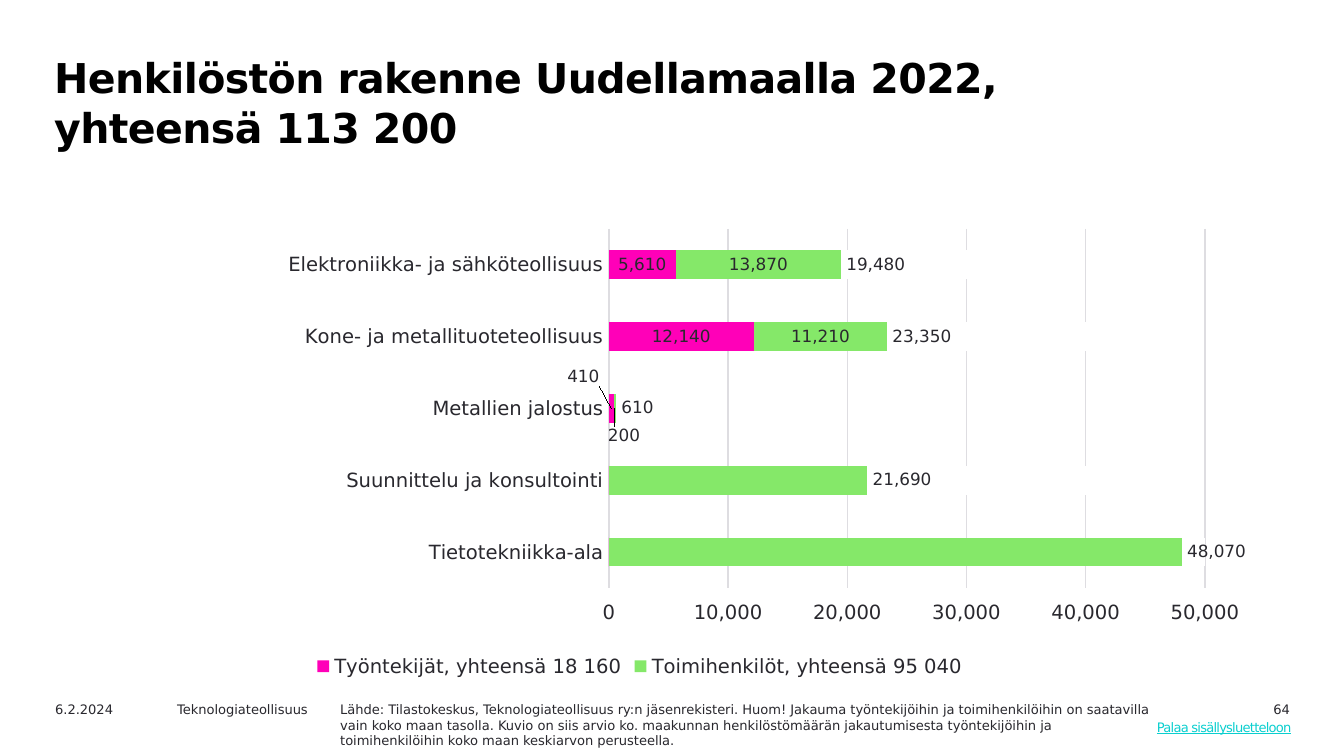
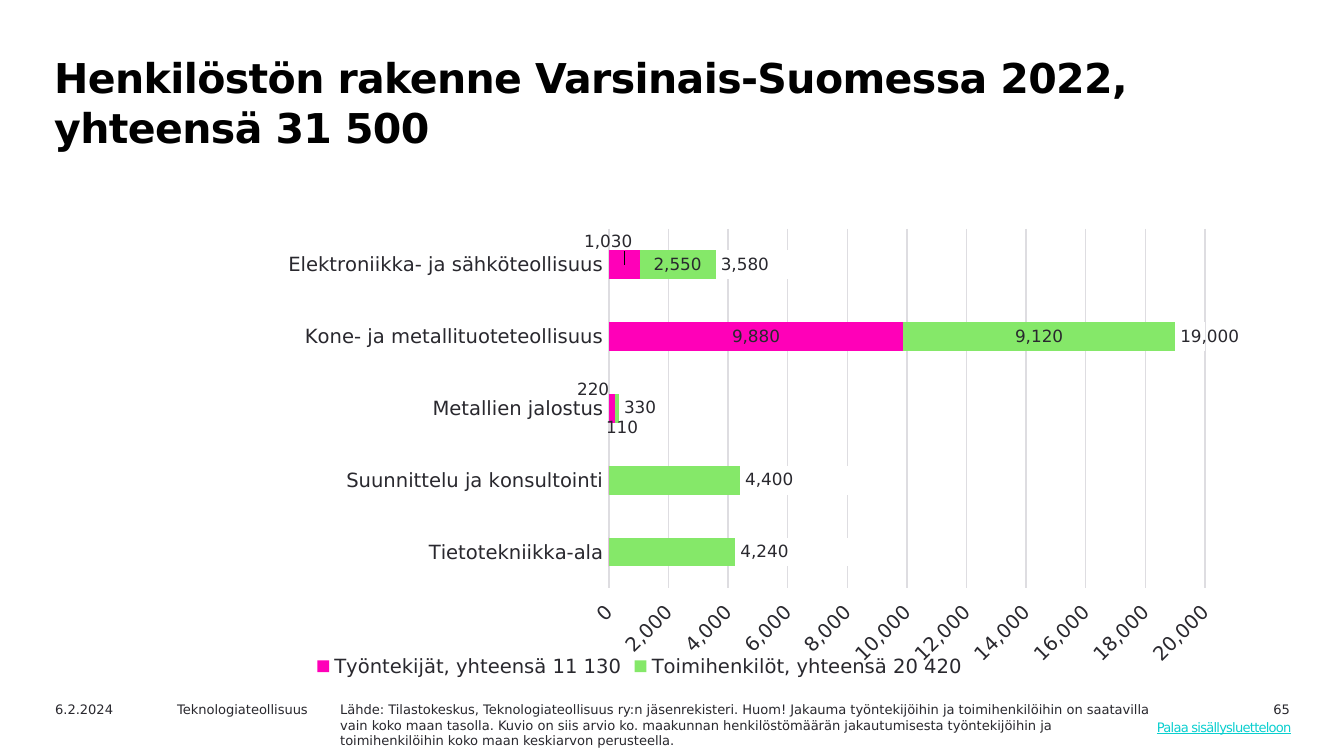
from pptx import Presentation
from pptx import util as u
from pptx.chart import data as chartdata
from pptx.dml import color
from pptx.enum import chart as charts
from pptx.enum import text
from pptx.oxml import parse_xml
from pptx.oxml.ns import nsdecls

FONT = "DejaVu Sans"
INK, BLACK, GRID, LINK = "29282E", "000000", "DEDDE1", "0ACFCF"
PINK, GREEN, WHITE = "FF00B8", "85E869", "FFFFFF"
NUMBERS = "#,##0"

PAGE = (1344, 756)
TITLE_BOX = (38, 42, 1175, 121)
CHART_BOX = (56, 163, 1204, 520)
FOOTER_BOX = (42, 695, 1274, 58)
PLOT = {"x": 0.46, "y": 0.13, "w": 0.49, "h": 0.69}
PLOT_PX = {"x": 553, "y": 66, "w": 596, "h": 359}

CATEGORIES = [
    "Tietotekniikka-ala",
    "Suunnittelu ja konsultointi",
    "Metallien jalostus",
    "Kone- ja metallituoteteollisuus",
    "Elektroniikka- ja sähköteollisuus",
]
SOURCE = (
    "Lähde: Tilastokeskus, Teknologiateollisuus ry:n jäsenrekisteri. Huom! "
    "Jakauma työntekijöihin ja toimihenkilöihin on saatavilla vain koko maan tasolla. "
    "Kuvio on siis arvio ko. maakunnan henkilöstömäärän jakautumisesta työntekijöihin ja "
    "toimihenkilöihin koko maan keskiarvon perusteella."
)

REGIONS = [
    {
        "title": "Henkilöstön rakenne Uudellamaalla 2022, yhteensä 113 200",
        "number": "64",
        "maximum": 50000,
        "workers": ("Työntekijät, yhteensä 18 160", [0, 0, 410, 12140, 5610]),
        "staff": ("Toimihenkilöt, yhteensä 95 040", [48070, 21690, 200, 11210, 13870]),
        "totals": [48070, 21690, 610, 23350, 19480],
        "worker_shifts": {2: (-28, -32)},
        "staff_shifts": {2: (9, 28)},
    },
    {
        "title": "Henkilöstön rakenne Varsinais-Suomessa 2022, yhteensä 31 500",
        "number": "65",
        "maximum": 20000,
        "workers": ("Työntekijät, yhteensä 11 130", [0, 0, 220, 9880, 1030]),
        "staff": ("Toimihenkilöt, yhteensä 20 420", [4240, 4400, 110, 9120, 2550]),
        "totals": [4240, 4400, 330, 19000, 3580],
        "worker_shifts": {2: (-19, -19), 4: (-16, -23)},
        "staff_shifts": {2: (5, 20)},
    },
]


def px(length):
    return u.Emu(round(length * 914400 / 134.4))


def rgb(value):
    return color.RGBColor.from_string(value)


def apply(target, values):
    for name, value in values.items():
        setattr(target, name, value)


def style_font(font, size, shade=INK, **extra):
    apply(font, {"name": FONT, "size": u.Pt(size), **extra})
    font.color.rgb = rgb(shade)


def add_text(page, box, words, size=7, shade=INK, spacing=0, frame=None, para=None, **extra):
    shape = page.shapes.add_textbox(*map(px, box))
    apply(shape.text_frame, {"word_wrap": True, **(frame or {})})
    paragraph = shape.text_frame.paragraphs[0]
    apply(paragraph, para or {})
    span = paragraph.add_run()
    span.text = words
    style_font(span.font, size, shade, **extra)
    if spacing:
        span.font._element.set("spc", str(spacing))
    return paragraph


def add_title(page, box, words):
    paragraph = add_text(
        page, box, words, 22, BLACK, -30,
        frame={"margin_top": px(9)}, para={"line_spacing": u.Pt(27)}, bold=True,
    )
    properties = paragraph._p.get_or_add_pPr()
    apply_indent = {"marL": str(px(3)), "indent": "0"}
    for name, value in apply_indent.items():
        properties.set(name, value)


def add_footer(page, box, number):
    left, top, width, height = box
    right = left + width
    add_text(page, (right - 139, top, 126, 24), number, para={"alignment": text.PP_ALIGN.RIGHT})
    add_text(page, (left, top, 134, 24), "6.2.2024")
    add_text(page, (left + 122, top, 191, 24), "Teknologiateollisuus")
    add_text(page, (left + 285, top, 837, height), SOURCE)
    margins = {f"margin_{side}": px(5) for side in ("left", "top", "right", "bottom")}
    add_text(
        page, (right - 164, top + 20, 164, 27), "Palaa sisällysluetteloon", 7, LINK, -40,
        frame={**margins, "auto_size": text.MSO_AUTO_SIZE.SHAPE_TO_FIT_TEXT}, underline=True,
    )


def manual_layout(values, inner=False):
    target = '<c:layoutTarget val="inner"/>' if inner else ""
    modes = '<c:xMode val="edge"/><c:yMode val="edge"/>' if inner else ""
    sizes = "".join(f'<c:{name} val="{value:.4f}"/>' for name, value in values.items())
    return parse_xml(
        f'<c:layout {nsdecls("c")}><c:manualLayout>{target}{modes}{sizes}</c:manualLayout></c:layout>'
    )


def point_label(series, index):
    style_font(series.points[index].data_label.font, 9)
    return series._element.xpath(f'.//c:dLbl[c:idx/@val="{index}"]')[0]


def hide_label(series, index):
    label = point_label(series, index)
    for child in list(label)[1:]:
        label.remove(child)
    label.append(parse_xml(f'<c:delete {nsdecls("c")} val="1"/>'))


def shift_label(series, index, shift, box):
    label = point_label(series, index)
    label.insert(1, manual_layout({"x": shift[0] / box[2], "y": shift[1] / box[3]}))
    label.insert(2, parse_xml(
        f'<c:numFmt {nsdecls("c")} formatCode="{NUMBERS}" sourceLinked="0"/>'
    ))


def style_series(series, shade):
    series.format.fill.solid()
    series.format.fill.fore_color.rgb = rgb(shade)
    series.invert_if_negative = False
    labels = series.data_labels
    apply(labels, {"show_value": True, "number_format": NUMBERS, "number_format_is_linked": False})
    style_font(labels.font, 9)


def style_axes(chart, maximum):
    category, value = chart.category_axis, chart.value_axis
    apply(category, {
        "major_tick_mark": charts.XL_TICK_MARK.NONE,
        "minor_tick_mark": charts.XL_TICK_MARK.NONE,
    })
    apply(value, {
        "minimum_scale": 0,
        "maximum_scale": maximum,
        "has_major_gridlines": True,
        "major_tick_mark": charts.XL_TICK_MARK.OUTSIDE,
    })
    apply(value.tick_labels, {"number_format": NUMBERS, "number_format_is_linked": False})
    for axis in (category, value):
        style_font(axis.tick_labels.font, 10.5)
    for line in (category.format.line, value.major_gridlines.format.line):
        line.color.rgb = rgb(GRID)
        line.width = u.Pt(0.75)
    value.format.line.fill.background()
    value._element.xpath("c:txPr/a:bodyPr")[0].set("rot", "-60000000")


def add_staff_chart(page, box, region):
    data = chartdata.CategoryChartData(number_format=NUMBERS)
    data.categories = CATEGORIES
    for name, values in (region["workers"], region["staff"], (" ", region["totals"])):
        data.add_series(name, values)
    chart = page.shapes.add_chart(
        charts.XL_CHART_TYPE.BAR_STACKED, *map(px, box), data
    ).chart
    apply(chart, {"has_title": False, "has_legend": True})
    style_font(chart.font, 10.5)
    apply(chart.legend, {
        "position": charts.XL_LEGEND_POSITION.BOTTOM, "include_in_layout": False,
    })
    style_font(chart.legend.font, 10.5)
    plot = chart.plots[0]
    apply(plot, {"gap_width": 150, "overlap": 100, "vary_by_categories": False})
    style_axes(chart, region["maximum"])

    for series, shade in zip(plot.series, (PINK, GREEN, WHITE)):
        style_series(series, shade)
    workers, staff, totals = plot.series
    for series, shifts in ((workers, region["worker_shifts"]), (staff, region["staff_shifts"])):
        for index in (0, 1):
            hide_label(series, index)
        for index, shift in shifts.items():
            shift_label(series, index, shift, box)
    totals.data_labels.position = charts.XL_LABEL_POSITION.INSIDE_BASE

    area = chart._chartSpace.chart.plotArea
    for layout in area.xpath("c:layout"):
        area.remove(layout)
    spans = {"x": box[2], "y": box[3], "w": box[2], "h": box[3]}
    area.insert(0, manual_layout({key: PLOT_PX[key] / spans[key] for key in PLOT_PX}, inner=True))


def add_region_page(deck, region):
    page = deck.slides.add_slide(deck.slide_layouts[6])
    page.background.fill.solid()
    page.background.fill.fore_color.rgb = rgb(WHITE)
    add_title(page, TITLE_BOX, region["title"])
    add_staff_chart(page, CHART_BOX, region)
    add_footer(page, FOOTER_BOX, region["number"])


def main():
    deck = Presentation()
    deck.slide_width, deck.slide_height = map(px, PAGE)
    for region in REGIONS:
        add_region_page(deck, region)
    deck.save("out.pptx")


if __name__ == "__main__":
    main()
